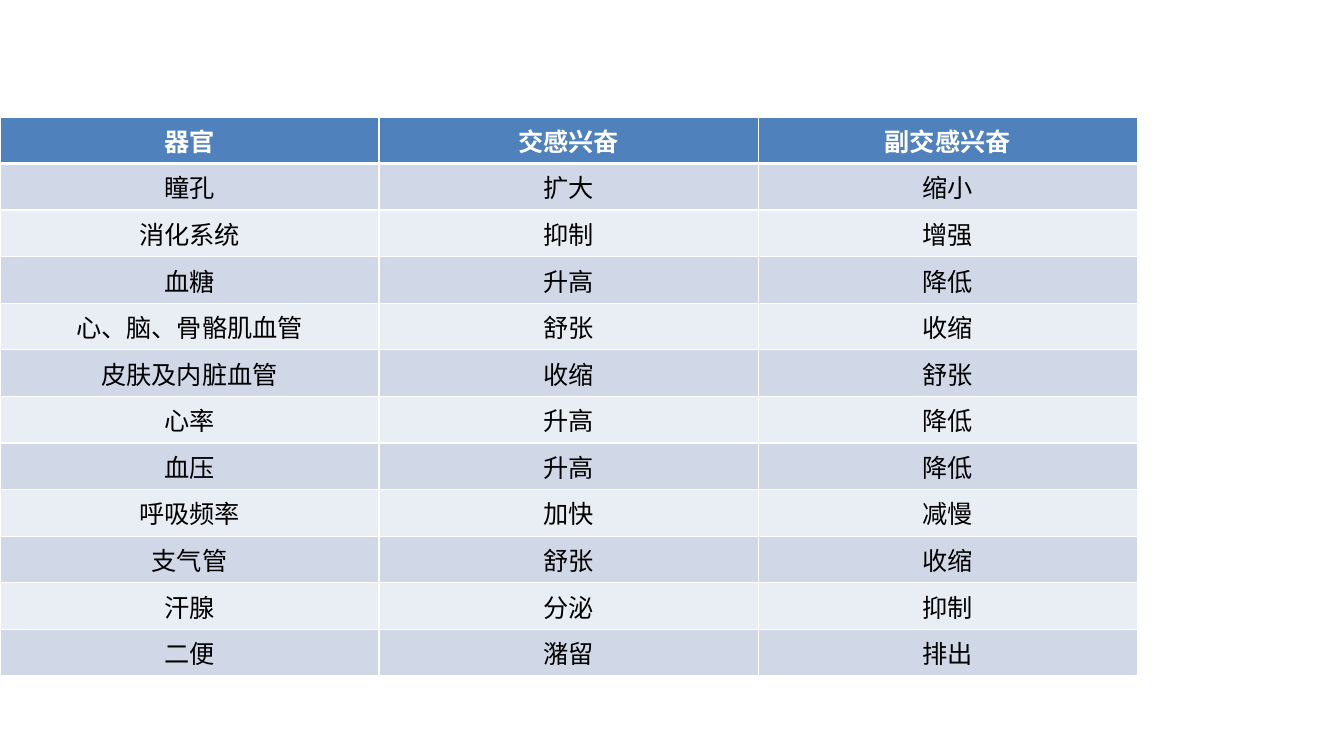
from lxml import etree
from pptx import Presentation
from pptx.dml.color import RGBColor
from pptx.enum import text
from pptx.oxml import ns
from pptx.util import Inches, Pt

HEADER = ("器官", "交感兴奋", "副交感兴奋")
EFFECTS = [
    ("瞳孔", "扩大", "缩小"),
    ("消化系统", "抑制", "增强"),
    ("血糖", "升高", "降低"),
    ("心、脑、骨骼肌血管", "舒张", "收缩"),
    ("皮肤及内脏血管", "收缩", "舒张"),
    ("心率", "升高", "降低"),
    ("血压", "升高", "降低"),
    ("呼吸频率", "加快", "减慢"),
    ("支气管", "舒张", "收缩"),
    ("汗腺", "分泌", "抑制"),
    ("二便", "潴留", "排出"),
]
COLORS = {"white": "FFFFFF", "black": "000000", "header": "4F81BD",
          "odd": "D0D8E8", "even": "E9EDF4"}
LATIN_FONT, CJK_FONT = "Calibri", "Noto Sans CJK SC"
SLIDE_SIZE = (13.33, 7.5)
TABLE_LEFT, TABLE_TOP = 0, 1.16
COLUMN_WIDTH, ROW_HEIGHT = 3.76, 0.46
THIN, THICK = 1, 3


def write(frame, words, size=18, color="black", bold=False):
    paragraph = frame.paragraphs[0]
    paragraph.alignment = text.PP_ALIGN.CENTER
    run = paragraph.add_run()
    run.text = words
    run.font.size = Pt(size)
    run.font.bold = bold
    run.font.color.rgb = RGBColor.from_string(COLORS[color])
    run.font.name = LATIN_FONT
    etree.SubElement(run.font._element, ns.qn("a:ea"), typeface=CJK_FONT)


def set_borders(cell, top=THIN, bottom=THIN):
    """Draw white cell borders; widths are in points."""
    properties = cell._tc.get_or_add_tcPr()
    widths = {"lnL": THIN, "lnR": THIN, "lnT": top, "lnB": bottom}
    for index, (side, width) in enumerate(widths.items()):
        line = etree.Element(ns.qn("a:" + side), w=str(Pt(width)))
        fill = etree.SubElement(line, ns.qn("a:solidFill"))
        etree.SubElement(fill, ns.qn("a:srgbClr"), val=COLORS["white"])
        properties.insert(index, line)


def add_effects_table(slide):
    rows = [HEADER] + EFFECTS
    table = slide.shapes.add_table(
        len(rows), len(HEADER), Inches(TABLE_LEFT), Inches(TABLE_TOP),
        Inches(COLUMN_WIDTH * len(HEADER)), Inches(ROW_HEIGHT * len(rows))).table
    for row_index, row in enumerate(rows):
        is_header = row_index == 0
        fill = "header" if is_header else "odd" if row_index % 2 else "even"
        for column_index, words in enumerate(row):
            cell = table.cell(row_index, column_index)
            cell.vertical_anchor = text.MSO_ANCHOR.MIDDLE
            cell.fill.solid()
            cell.fill.fore_color.rgb = RGBColor.from_string(COLORS[fill])
            set_borders(cell, top=THICK if row_index == 1 else THIN,
                        bottom=THICK if is_header else THIN)
            write(cell.text_frame, words, bold=is_header,
                  color="white" if is_header else "black")


def main():
    presentation = Presentation()
    presentation.slide_width, presentation.slide_height = map(Inches, SLIDE_SIZE)
    slide = presentation.slides.add_slide(presentation.slide_layouts[6])
    add_effects_table(slide)
    presentation.save("out.pptx")


if __name__ == "__main__":
    main()
